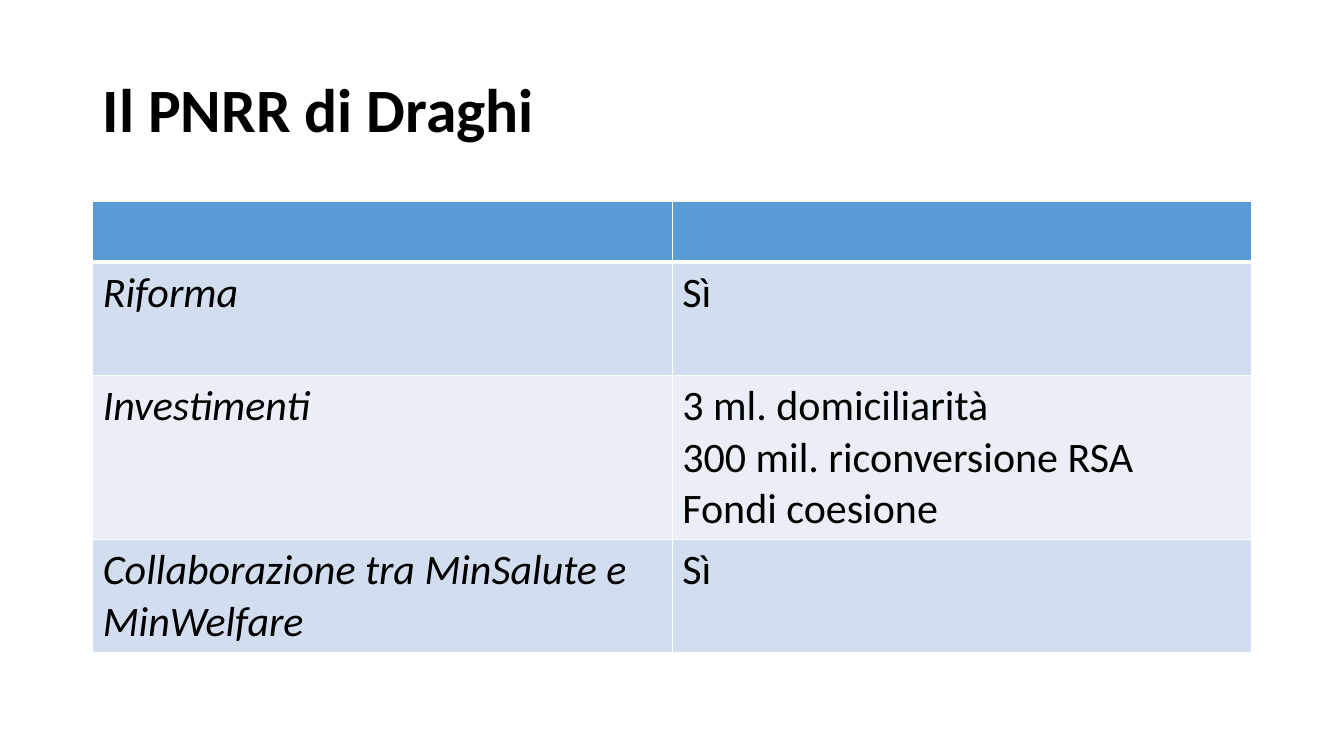
import pptx
import pptx.util
import pptx.dml.color
import pptx.enum.text
import pptx.oxml
import pptx.oxml.ns

COLORS = {
    "ink": "000000",
    "line": "FFFFFF",
    "head": "5B9BD5",
    "dark": "D2DEEF",
    "light": "EAEFF7",
}
ROWS = [
    ("", ""),
    ("Riforma", "Sì"),
    ("Investimenti",
     "3 ml. domiciliarità\n300 mil. riconversione RSA\nFondi coesione"),
    ("Collaborazione tra MinSalute e MinWelfare", "Sì"),
]
HEIGHTS = [0.08, 0.15, 0.217, 0.147]  # shares of the slide's height
LEFT, WIDTH = 0.069, 0.8625  # shares of the slide's width


def rgb(name):
    return pptx.dml.color.RGBColor.from_string(COLORS[name])


class Deck:
    """Holds the style and the current slide; places things by shares of its size."""

    font = "Calibri"

    def __init__(self):
        self.prs = pptx.Presentation()
        self.prs.slide_width = pptx.util.Inches(13.33)
        self.prs.slide_height = pptx.util.Inches(7.5)
        self.slide = self.prs.slides.add_slide(self.prs.slide_layouts[5])

    def wide(self, share):
        return int(self.prs.slide_width * share)

    def high(self, share):
        return int(self.prs.slide_height * share)

    def style(self, frame, size, bold=False, italic=False):
        for para in frame.paragraphs:
            para.alignment = pptx.enum.text.PP_ALIGN.LEFT
            for run in para.runs:
                font = run.font
                font.name, font.size = self.font, pptx.util.Pt(size)
                font.bold, font.italic = bold, italic
                font.color.rgb = rgb("ink")

    def title(self, text, top, height):
        box = self.slide.shapes.title
        box.left, box.width = self.wide(LEFT), self.wide(WIDTH)
        box.top, box.height = self.high(top), self.high(height)
        frame = box.text_frame
        frame.text = text
        frame.vertical_anchor = pptx.enum.text.MSO_ANCHOR.MIDDLE
        frame.paragraphs[0].line_spacing = 0.9
        self.style(frame, 44, bold=True)

    def border(self, cell, base):
        """Draw all four cell edges, with the given width in points at the base."""
        props = cell._tc.get_or_add_tcPr()
        for side, width in zip("LRTB", (1, 1, 1, base)):
            props.append(pptx.oxml.parse_xml(
                f'<a:ln{side} {pptx.oxml.ns.nsdecls("a")} w="{pptx.util.Pt(width)}">'
                f'<a:solidFill><a:srgbClr val="{COLORS["line"]}"/></a:solidFill>'
                f'</a:ln{side}>'))

    def table(self, rows, heights, top):
        grid = self.slide.shapes.add_table(
            len(rows), len(rows[0]), self.wide(LEFT), self.high(top),
            self.wide(WIDTH), self.high(sum(heights))).table
        for r, (texts, height) in enumerate(zip(rows, heights)):
            grid.rows[r].height = self.high(height)
            shade = "head" if r == 0 else "dark" if r % 2 else "light"
            for c, text in enumerate(texts):
                cell = grid.cell(r, c)
                self.border(cell, 3 if r == 0 else 1)
                cell.fill.solid()
                cell.fill.fore_color.rgb = rgb(shade)
                cell.text_frame.text = text
                self.style(cell.text_frame, 30, italic=c == 0)


def main():
    deck = Deck()
    deck.title("Il PNRR di Draghi", 0.053, 0.193)
    deck.table(ROWS, HEIGHTS, 0.267)
    deck.prs.save("out.pptx")


if __name__ == "__main__":
    main()
